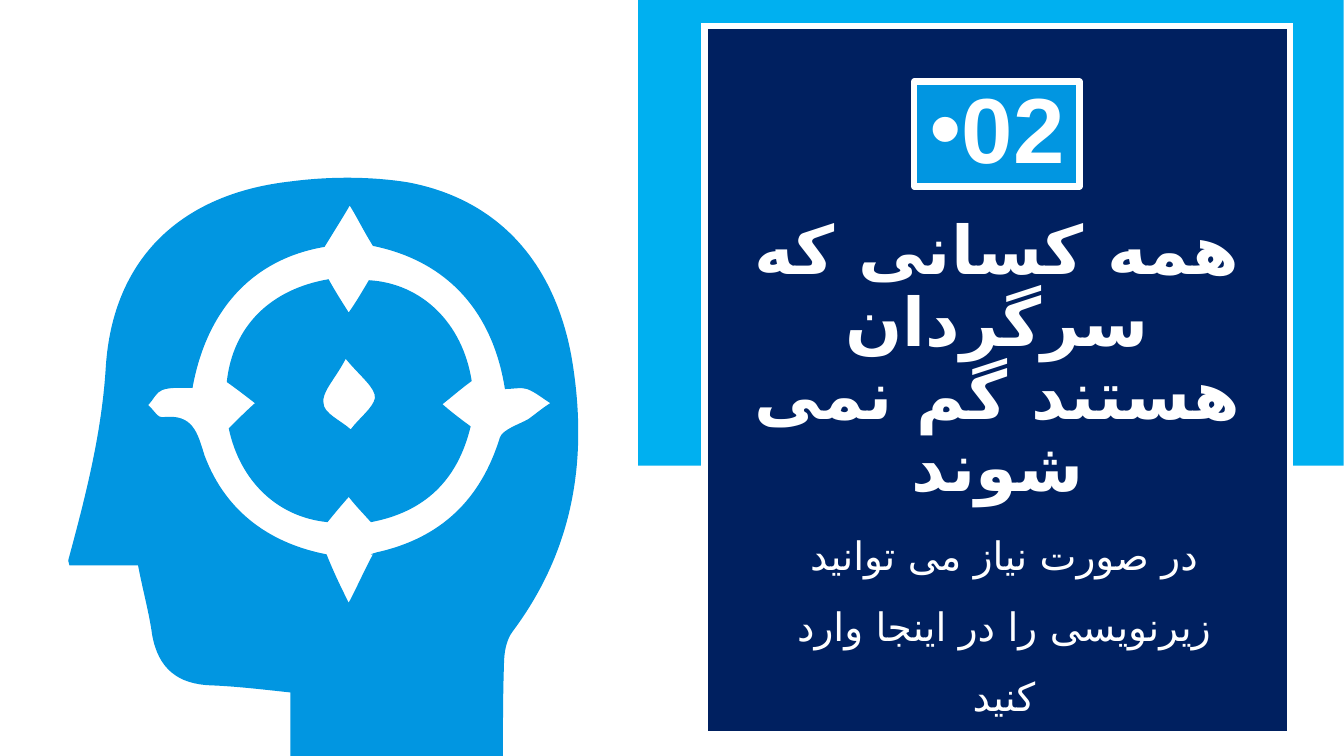
"""Build a section slide with a compass-head illustration and a Persian title panel."""
from dataclasses import dataclass

from lxml import etree
from pptx import Presentation
from pptx.dml.color import RGBColor as RGB
from pptx.enum.shapes import MSO_SHAPE as SHAPE
from pptx.enum.text import MSO_ANCHOR as ANCHOR, PP_ALIGN as ALIGN
from pptx.oxml.ns import qn
from pptx.util import Pt


@dataclass(frozen=True)
class Theme:
    font: str = "Arial"
    persian_font: str = "DejaVu Sans"
    white: RGB = RGB(0xFF, 0xFF, 0xFF)
    sky: RGB = RGB(0x00, 0xB0, 0xF0)
    navy: RGB = RGB(0x00, 0x20, 0x60)
    blue: RGB = RGB(0x01, 0x96, 0xE1)
    border: float = 4.5
    number_size: int = 66
    title_size: int = 48
    subtitle_size: int = 28


T = Theme()
GRID = 0.72

HEAD = [
    [288, 751, 288, 729, 288, 710, 288, 687, 260, 684, 235, 681, 210, 680,
     176, 679, 157, 663, 151, 630, 148, 608, 142, 587, 137, 561,
     113, 561, 90, 561, 69, 561, 68, 557, 67, 555, 68, 555,
     85, 492, 101, 430, 105, 364, 112, 256, 180, 192, 289, 180,
     327, 175, 368, 175, 405, 181, 495, 198, 550, 261, 567, 354,
     584, 453, 570, 544, 509, 626, 502, 635, 500, 648, 500, 660,
     499, 689, 499, 719, 499, 751, 428, 751, 359, 751, 288, 751],
    [322, 245, 251, 257, 205, 307, 191, 385, 179, 385, 169, 384, 161, 387,
     155, 389, 152, 397, 147, 402, 152, 406, 157, 415, 161, 414,
     192, 410, 196, 430, 203, 452, 225, 511, 272, 540, 324, 550,
     332, 570, 339, 584, 346, 598, 353, 585, 359, 571, 370, 550,
     365, 551, 370, 549, 374, 548, 437, 534, 477, 496, 496, 434,
     499, 426, 515, 421, 524, 416, 531, 411, 538, 405, 546, 400,
     538, 395, 531, 389, 523, 386, 517, 384, 509, 386, 501, 386,
     488, 304, 439, 258, 370, 244, 359, 226, 354, 215, 347, 204,
     340, 216, 333, 227, 322, 245],
]
DIAL = [
    [467, 423, 454, 477, 421, 508, 368, 518, 360, 509, 353, 502, 346, 493,
     339, 501, 333, 508, 325, 518, 275, 513, 238, 477, 227, 425,
     236, 416, 245, 407, 253, 400, 244, 393, 235, 386, 225, 379,
     231, 324, 268, 287, 326, 277, 332, 288, 339, 299, 346, 310,
     353, 300, 359, 290, 366, 278, 418, 281, 459, 320, 468, 378,
     457, 386, 448, 394, 439, 401, 447, 408, 456, 415, 467, 423],
    [343, 356, 332, 377, 319, 389, 321, 400, 321, 410, 338, 417, 348, 426,
     356, 415, 370, 405, 372, 395, 373, 385, 358, 374, 343, 356],
]


def write(sp, text, size, bold, spacing, anchor):
    """Put one centred white paragraph in a shape and return it."""
    tf = sp.text_frame
    tf.word_wrap = True
    tf.vertical_anchor = anchor
    p = tf.paragraphs[0]
    p.alignment = ALIGN.CENTER
    p.line_spacing = spacing
    r = p.add_run()
    r.text = text
    r.font.name = T.font
    r.font.size = Pt(size)
    r.font.bold = bold
    r.font.color.rgb = T.white
    etree.SubElement(r.font._element, qn("a:cs")).set("typeface", T.persian_font)
    return p


prs = Presentation()
prs.slide_width, prs.slide_height = Pt(960), Pt(540)
s = prs.slides.add_slide(prs.slide_layouts[6])

boxes = []
for box, fill, outlined in [
    ((455.76, 0, 504, 332.64), T.sky, False),
    ((503.28, 18.72, 418.32, 505.44), T.navy, True),
    ((653.04, 58.32, 118.08, 74.88), T.blue, True),
]:
    sp = s.shapes.add_shape(SHAPE.RECTANGLE, *map(Pt, box))
    sp.shadow.inherit = False
    sp.fill.solid()
    sp.fill.fore_color.rgb = fill
    if outlined:
        sp.line.color.rgb = T.white
        sp.line.width = Pt(T.border)
    else:
        sp.line.fill.background()
    boxes.append(sp)

band, panel, number = boxes
etree.SubElement(panel.line._get_or_add_ln(), qn("a:miter")).set("lim", "800000")
p = write(number, "02", T.number_size, True, 0.9, ANCHOR.MIDDLE)
pPr = p._p.get_or_add_pPr()
pPr.set("marL", "0")
pPr.set("indent", "0")
etree.SubElement(pPr, qn("a:buFont")).set("typeface", T.font)
etree.SubElement(pPr, qn("a:buChar")).set("char", "•")

for box, text, size, bold, spacing, before, anchor in [
    ((540, 359.28, 354.24, 69.84), "در صورت نیاز می توانید زیرنویسی را در اینجا وارد کنید",
     T.subtitle_size, False, 1.5, 10, ANCHOR.TOP),
    ((520.56, 162, 383.76, 192.24), "همه کسانی که سرگردان هستند گم نمی شوند",
     T.title_size, True, 0.9, 0, ANCHOR.MIDDLE),
]:
    sp = s.shapes.add_textbox(*map(Pt, box))
    p = write(sp, text, size, bold, spacing, anchor)
    p.space_before = Pt(before)
    p._p.get_or_add_pPr().set("rtl", "1")

compass_head = s.shapes.add_group_shape()
for contours in (HEAD, DIAL):
    outer, *holes = [[(Pt(x * GRID), Pt(y * GRID)) for x, y in zip(c[::2], c[1::2])]
                     for c in contours]
    builder = compass_head.shapes.build_freeform(*outer[0])
    builder.add_line_segments(outer[1:], close=True)
    for hole in holes:
        builder.move_to(*hole[0])
        builder.add_line_segments(hole[1:], close=True)
    sp = builder.convert_to_shape()
    lines = list(sp._element.iter(qn("a:lnTo")))
    for i in range(0, len(lines), 3):
        curve = etree.Element(qn("a:cubicBezTo"))
        lines[i].addprevious(curve)
        for line in lines[i:i + 3]:
            curve.append(line[0])
            line.getparent().remove(line)
    sp.shadow.inherit = False
    sp.fill.solid()
    sp.fill.fore_color.rgb = T.blue
    sp.line.fill.background()

prs.save("out.pptx")
